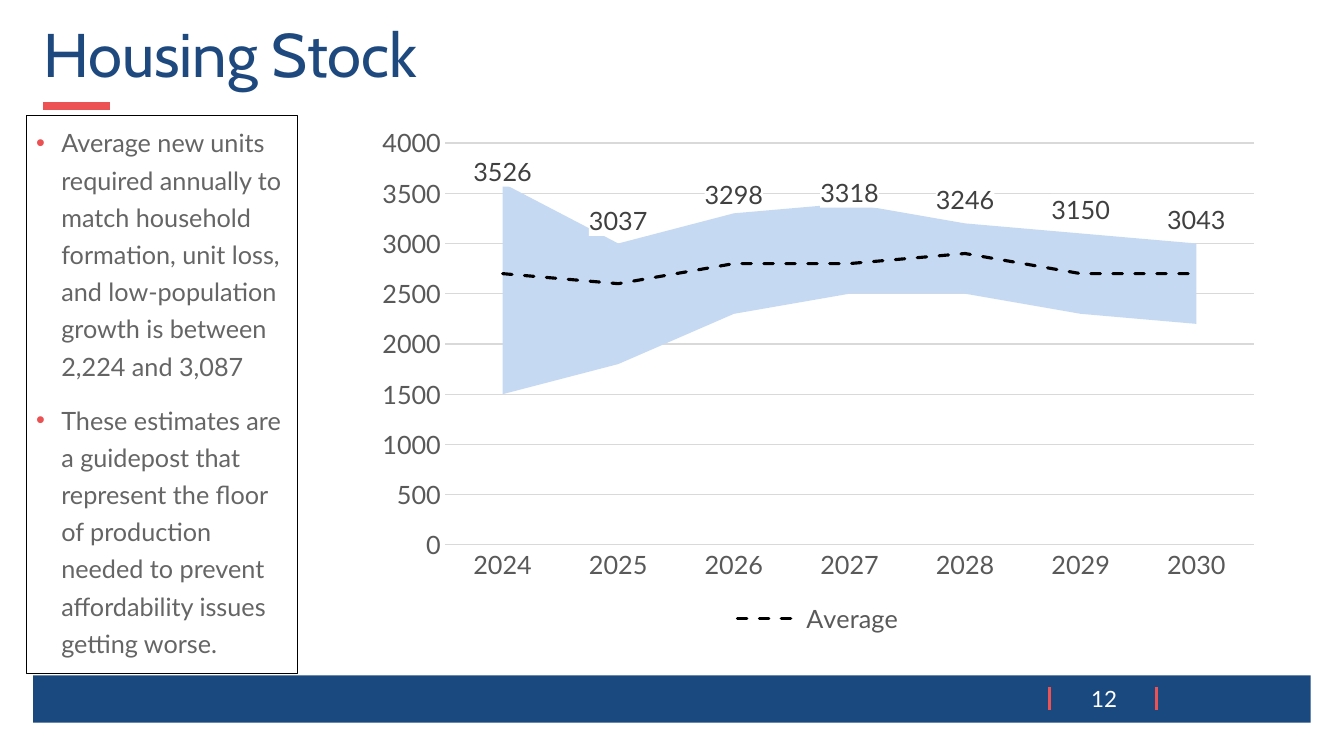
from dataclasses import dataclass

from lxml.etree import SubElement
from pptx import Presentation
from pptx.chart.data import CategoryChartData
from pptx.dml.color import RGBColor
from pptx.enum.chart import XL_CHART_TYPE, XL_LABEL_POSITION, XL_LEGEND_POSITION, XL_MARKER_STYLE, XL_TICK_MARK
from pptx.enum.dml import MSO_LINE
from pptx.enum.shapes import MSO_CONNECTOR, MSO_SHAPE
from pptx.enum.text import MSO_ANCHOR, PP_ALIGN
from pptx.oxml import parse_xml
from pptx.oxml.ns import nsdecls, qn
from pptx.util import Inches, Pt


@dataclass(frozen=True)
class Theme:
    heading_font: str = "Cabin"
    body_font: str = "Lato"
    bullet_font: str = "Arial"
    title_size: int = 44
    body_size: int = 18
    number_size: int = 16
    title: str = "1E497F"
    footer: str = "1A497F"
    accent: str = "EC5153"
    bullet: str = "EB5152"
    body: str = "656565"
    axis: str = "595959"
    label: str = "404040"
    grid: str = "D9D9D9"
    band: str = "C6D9F2"
    black: str = "000000"
    white: str = "FFFFFF"


THEME = Theme()
YEARS = [str(year) for year in range(2024, 2031)]
UPPER = [3526, 3037, 3298, 3318, 3246, 3150, 3043]
LOWER = [1500, 1800, 2300, 2500, 2500, 2300, 2200]
BAND = [2100, 1200, 1000, 900, 700, 800, 800]
AVERAGE = [2700, 2600, 2800, 2800, 2900, 2700, 2700]
FINDINGS = [
    "Average new units required annually to match household formation, unit loss, "
    "and low-population growth is between 2,224 and 3,087",
    "These estimates are a guidepost that represent the floor of production "
    "needed to prevent affordability issues getting worse.",
]


def color(value):
    return RGBColor.from_string(value)


def set_font(font, size, value, name=THEME.body_font):
    font.size, font.name, font.bold = Pt(size), name, False
    font.color.rgb = color(value)


def add_bullet(paragraph):
    properties = paragraph._p.get_or_add_pPr()
    properties.set("marL", str(Inches(0.25)))
    properties.set("indent", str(Inches(-0.25)))
    bullet_color = SubElement(properties, qn("a:buClr"))
    SubElement(bullet_color, qn("a:srgbClr")).set("val", THEME.bullet)
    SubElement(properties, qn("a:buFont")).set("typeface", THEME.bullet_font)
    SubElement(properties, qn("a:buChar")).set("char", "•")


def write_text(shape, paragraphs, *, size, value, name=THEME.body_font, align=PP_ALIGN.LEFT,
               anchor=MSO_ANCHOR.TOP, line_spacing=1.0, gap=0, bulleted=False):
    frame = shape.text_frame
    frame.word_wrap = True
    frame.vertical_anchor = anchor
    for index, text in enumerate(paragraphs):
        paragraph = frame.add_paragraph() if index else frame.paragraphs[0]
        paragraph.alignment = align
        paragraph.line_spacing = line_spacing
        paragraph.space_before = Pt(gap if index else 0)
        paragraph.space_after = Pt(gap)
        if bulleted:
            add_bullet(paragraph)
        run = paragraph.add_run()
        run.text = text
        set_font(run.font, size, value, name)


def add_rule(slide, start, end, width):
    rule = slide.shapes.add_connector(
        MSO_CONNECTOR.STRAIGHT, *(Inches(length) for length in (*start, *end)))
    rule.line.color.rgb = color(THEME.accent)
    rule.line.width = Pt(width)
    SubElement(rule._element.spPr, qn("a:effectLst"))


def add_rectangle(slide, box):
    rectangle = slide.shapes.add_shape(MSO_SHAPE.RECTANGLE, *(Inches(length) for length in box))
    rectangle.shadow.inherit = False
    return rectangle


def add_heading(slide, box):
    left, top, width, height = box
    add_rule(slide, (left + 0.1, top + 0.86), (left + 0.76, top + 0.86), 6)
    heading = slide.shapes.add_textbox(*(Inches(length) for length in box))
    write_text(heading, ["Housing Stock"], size=THEME.title_size, value=THEME.title,
               name=THEME.heading_font, anchor=MSO_ANCHOR.MIDDLE, line_spacing=0.9)


def add_footer(slide, box):
    left, top, width, height = box
    bar = add_rectangle(slide, box)
    bar.fill.solid()
    bar.fill.fore_color.rgb = color(THEME.footer)
    bar.line.fill.background()
    for x in (left + 10.08, left + 11.14):
        add_rule(slide, (x, top + 0.12), (x, top + 0.34), 2.25)
    number = slide.shapes.add_textbox(
        Inches(left + 10.3), Inches(top + 0.05), Inches(0.64), Inches(0.37))
    write_text(number, ["12"], size=THEME.number_size, value=THEME.white,
               align=PP_ALIGN.CENTER, anchor=MSO_ANCHOR.MIDDLE)


def add_findings(slide, box):
    panel = add_rectangle(slide, box)
    panel.fill.background()
    panel.line.color.rgb = color(THEME.black)
    panel.line.width = Pt(0.75)
    write_text(panel, FINDINGS, size=THEME.body_size, value=THEME.body,
               line_spacing=1.23, gap=6, bulleted=True)


def move_to_line_plot(chart, first):
    """Turn the area series from index first onwards into lines on the same axes."""
    area = chart._chartSpace.find(".//" + qn("c:areaChart"))
    line = parse_xml(f'<c:lineChart {nsdecls("c")}><c:grouping val="standard"/>'
                     '<c:varyColors val="0"/></c:lineChart>')
    for series in area.findall(qn("c:ser"))[first:]:
        for flag in series.findall(qn("c:invertIfNegative")):
            series.remove(flag)
        line.append(series)
    SubElement(line, qn("c:marker")).set("val", "1")
    for axis in area.findall(qn("c:axId")):
        SubElement(line, qn("c:axId")).set("val", axis.get("val"))
    area.addnext(line)


def set_plot_layout(chart, **fractions):
    plot_area = chart._chartSpace.find(".//" + qn("c:plotArea"))
    for layout in plot_area.findall(qn("c:layout")):
        plot_area.remove(layout)
    sizes = "".join(f'<c:{key} val="{value}"/>' for key, value in fractions.items())
    plot_area.insert(0, parse_xml(
        f'<c:layout {nsdecls("c")}><c:manualLayout><c:layoutTarget val="inner"/>'
        f'<c:xMode val="edge"/><c:yMode val="edge"/>{sizes}</c:manualLayout></c:layout>'))


def format_axes(chart):
    for axis in (chart.category_axis, chart.value_axis):
        axis.major_tick_mark = axis.minor_tick_mark = XL_TICK_MARK.NONE
        set_font(axis.tick_labels.font, THEME.body_size, THEME.axis)
    values = chart.value_axis
    values.minimum_scale, values.maximum_scale, values.major_unit = 0, 4000, 500
    values.has_major_gridlines = True
    values.format.line.fill.background()
    chart.category_axis.has_major_gridlines = False
    for line in (values.major_gridlines.format.line, chart.category_axis.format.line):
        line.color.rgb = color(THEME.grid)
        line.width = Pt(0.75)
    values._element.find(qn("c:crossBetween")).set("val", "between")


def format_series(chart):
    areas, lines = chart.plots
    areas.vary_by_categories = lines.vary_by_categories = False
    base, band = areas.series
    base.format.fill.background()
    band.format.fill.solid()
    band.format.fill.fore_color.rgb = color(THEME.band)
    for series in lines.series:
        series.smooth = False
        series.marker.style = XL_MARKER_STYLE.NONE
        series.format.line.fill.background()
    upper, _, average = lines.series
    average.format.line.color.rgb = color(THEME.black)
    average.format.line.width = Pt(2.25)
    average.format.line.dash_style = MSO_LINE.DASH
    average._element.find(".//" + qn("a:ln")).set("cap", "rnd")
    labels = upper.data_labels
    labels.show_value = True
    labels.position = XL_LABEL_POSITION.ABOVE
    set_font(labels.font, THEME.body_size, THEME.label)
    labels._element.find(qn("c:txPr")).addprevious(parse_xml(
        f'<c:spPr {nsdecls("c", "a")}><a:solidFill><a:srgbClr val="{THEME.white}"/>'
        '</a:solidFill><a:ln><a:noFill/></a:ln></c:spPr>'))


def add_legend(chart, hidden_count):
    chart.has_legend = True
    legend = chart.legend
    legend.position = XL_LEGEND_POSITION.BOTTOM
    legend.include_in_layout = False
    set_font(legend.font, THEME.body_size, THEME.axis)
    for index in reversed(range(hidden_count)):
        legend._element.find(qn("c:legendPos")).addnext(parse_xml(
            f'<c:legendEntry {nsdecls("c")}><c:idx val="{index}"/>'
            '<c:delete val="1"/></c:legendEntry>'))


def add_range_chart(slide, box):
    data = CategoryChartData(number_format="0")
    data.categories = YEARS
    for name, values in (("Series 1", LOWER), ("Series 2", BAND), ("Series 3", UPPER),
                         ("Series 4", LOWER), ("Average", AVERAGE)):
        data.add_series(name, values)
    chart = slide.shapes.add_chart(
        XL_CHART_TYPE.AREA_STACKED, *(Inches(length) for length in box), data).chart
    chart.has_title = False
    set_font(chart.font, THEME.body_size, THEME.black)
    move_to_line_plot(chart, first=2)
    set_plot_layout(chart, x=0.09, y=0.05, w=0.89, h=0.77)
    format_axes(chart)
    format_series(chart)
    add_legend(chart, hidden_count=4)


def main():
    presentation = Presentation()
    presentation.slide_width, presentation.slide_height = Inches(13.33), Inches(7.5)
    slide = presentation.slides.add_slide(presentation.slide_layouts[6])
    add_footer(slide, (0.33, 6.7, 12.67, 0.47))
    add_heading(slide, (0.33, 0.19, 12.67, 0.77))
    add_findings(slide, (0.26, 1.15, 2.69, 5.53))
    add_range_chart(slide, (3.6, 1.16, 9.02, 5.18))
    presentation.save("out.pptx")


if __name__ == "__main__":
    main()
